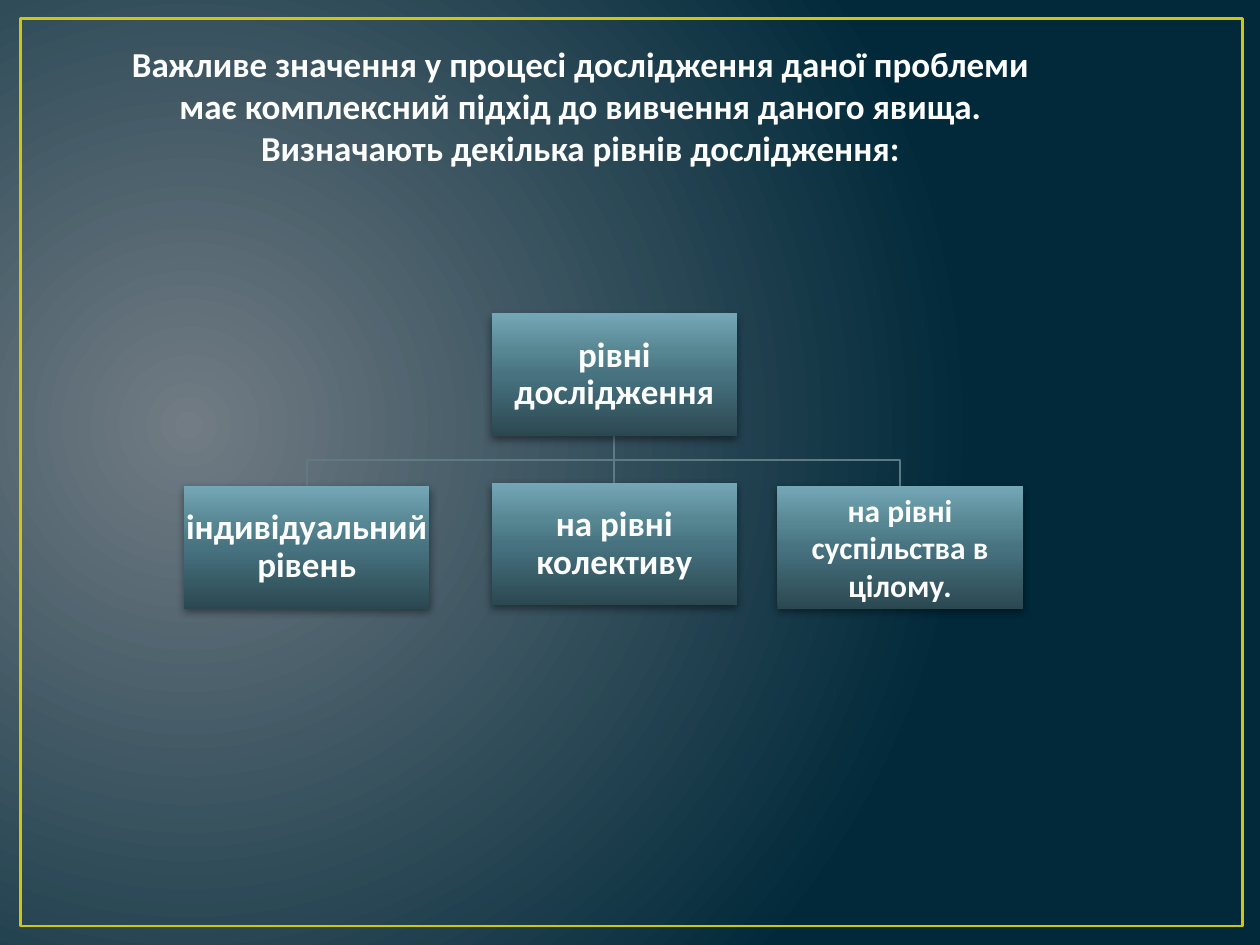
from dataclasses import dataclass

from lxml import etree
from pptx import Presentation
from pptx.dml.color import RGBColor
from pptx.enum.shapes import MSO_CONNECTOR, MSO_SHAPE
from pptx.enum.text import MSO_ANCHOR, PP_ALIGN
from pptx.oxml import parse_xml
from pptx.oxml.ns import nsdecls, qn
from pptx.util import Cm, Pt

RECTANGLE = MSO_SHAPE.RECTANGLE
STRAIGHT = MSO_CONNECTOR.STRAIGHT
CENTER = PP_ALIGN.CENTER
MIDDLE = MSO_ANCHOR.MIDDLE


@dataclass(frozen=True)
class Theme:
    font: str = "Calibri"
    text: str = "FCFDFD"
    text_outline: str = "5FA6BB"
    frame: str = "CFC60D"
    branch: str = "5E7B84"
    background: tuple = ((0, "717C84"), (100, "01293A"))
    box: tuple = ((0, "2B4851"), (50, "477380"), (70, "588794"), (100, "74A7B6"))
    normal_size: int = 20
    small_size: int = 18
    frame_width: float = 1.5
    branch_width: float = 1.25


BOX_WIDTH, BOX_HEIGHT = 4.95, 2.47
ROOT_LEFT, ROOT_TOP = 9.91, 6.32
BRANCH_LEVEL = 9.27


def gradient(stops, direction):
    stop_xml = "".join(
        f'<a:gs pos="{position * 1000}"><a:srgbClr val="{color}"/></a:gs>'
        for position, color in stops
    )
    return parse_xml(
        f'<a:gradFill {nsdecls("a")} rotWithShape="1">'
        f"<a:gsLst>{stop_xml}</a:gsLst>{direction}</a:gradFill>"
    )


class SlideBuilder:
    def __init__(self, slide, theme):
        self.slide = slide
        self.theme = theme

    def background(self):
        fill = self.slide.background.fill
        fill.solid()
        properties = self.slide.element.find(".//" + qn("p:bgPr"))
        direction = (
            '<a:path path="circle">'
            '<a:fillToRect l="15000" t="50000" r="85000" b="60000"/></a:path>'
        )
        properties.replace(
            properties.find(qn("a:solidFill")),
            gradient(self.theme.background, direction),
        )

    def style_line(self, line, color, width):
        line.color.rgb = RGBColor.from_string(color)
        line.width = Pt(width)

    def frame(self, left, top, width, height):
        shape = self.slide.shapes.add_shape(
            RECTANGLE, Cm(left), Cm(top), Cm(width), Cm(height)
        )
        shape.shadow.inherit = False
        shape.fill.background()
        self.style_line(shape.line, self.theme.frame, self.theme.frame_width)

    def set_text(self, shape, text, size):
        """Put one centred bold paragraph with outlined letters in the shape."""
        shape.text_frame.word_wrap = True
        paragraph = shape.text_frame.paragraphs[0]
        paragraph.text = text
        paragraph.alignment = CENTER
        font = paragraph.font
        font.name = self.theme.font
        font.size = Pt(size)
        font.bold = True
        font.color.rgb = RGBColor.from_string(self.theme.text)
        outline = parse_xml(
            f'<a:ln {nsdecls("a")} w="900"><a:solidFill>'
            f'<a:srgbClr val="{self.theme.text_outline}"><a:alpha val="55000"/>'
            '</a:srgbClr></a:solidFill><a:prstDash val="solid"/></a:ln>'
        )
        shape.element.find(".//" + qn("a:defRPr")).insert(0, outline)
        return paragraph

    def title(self, text, left, top, width, height):
        text_box = self.slide.shapes.add_textbox(
            Cm(left), Cm(top), Cm(width), Cm(height)
        )
        self.set_text(text_box, text, self.theme.normal_size)

    def branch(self, start_x, start_y, end_x, end_y):
        """Join two boxes: straight down, or with a step at the branch level."""
        shapes = self.slide.shapes
        if start_x == end_x:
            shape = shapes.add_connector(
                STRAIGHT, Cm(start_x), Cm(start_y), Cm(end_x), Cm(end_y)
            )
            etree.SubElement(shape.element.spPr, qn("a:effectLst"))
        else:
            builder = shapes.build_freeform(Cm(start_x), Cm(start_y))
            corners = [(start_x, BRANCH_LEVEL), (end_x, BRANCH_LEVEL), (end_x, end_y)]
            builder.add_line_segments([(Cm(x), Cm(y)) for x, y in corners], close=False)
            shape = builder.convert_to_shape()
            shape.shadow.inherit = False
            shape.fill.background()
        self.style_line(shape.line, self.theme.branch, self.theme.branch_width)

    def box(self, text, left, top, size, line_spacing=None):
        shape = self.slide.shapes.add_shape(
            RECTANGLE, Cm(left), Cm(top), Cm(BOX_WIDTH), Cm(BOX_HEIGHT)
        )
        shape.line.fill.background()
        shape.fill.solid()
        properties = shape.element.spPr
        properties.replace(
            properties.find(qn("a:solidFill")),
            gradient(self.theme.box, '<a:lin ang="16200000" scaled="0"/>'),
        )
        shape.shadow.inherit = False
        properties.find(qn("a:effectLst")).append(parse_xml(
            f'<a:outerShdw {nsdecls("a")} blurRad="{Pt(5)}" dist="{Pt(2)}" '
            'dir="5400000" rotWithShape="0"><a:srgbClr val="000000">'
            '<a:alpha val="43000"/></a:srgbClr></a:outerShdw>'
        ))
        frame = shape.text_frame
        frame.vertical_anchor = MIDDLE
        frame.margin_left = frame.margin_right = Cm(0.03)
        frame.margin_top = frame.margin_bottom = Cm(0.03)
        paragraph = self.set_text(shape, text, size)
        if line_spacing:
            paragraph.line_spacing = line_spacing
            paragraph.space_after = Pt(0.35 * size)


def main():
    presentation = Presentation()
    presentation.slide_width, presentation.slide_height = Cm(25.4), Cm(19.05)
    slide = presentation.slides.add_slide(presentation.slide_layouts[6])
    theme = Theme()
    builder = SlideBuilder(slide, theme)

    builder.background()
    builder.frame(0.41, 0.38, 24.64, 18.29)
    builder.title(
        "Важливе значення у процесі дослідження даної проблеми має комплексний "
        "підхід до вивчення даного явища. Визначають декілька рівнів дослідження:",
        1.9, 0.74, 19.61, 2.82,
    )

    levels = [
        ("індивідуальний рівень", 3.71, 9.8, theme.normal_size, 0.9),
        ("на рівні колективу", ROOT_LEFT, 9.73, theme.normal_size, 0.9),
        ("на рівні суспільства в цілому.", 15.67, 9.8, theme.small_size, None),
    ]
    half = BOX_WIDTH / 2
    for _, left, top, _, _ in levels:
        builder.branch(ROOT_LEFT + half, ROOT_TOP + BOX_HEIGHT, left + half, top)
    builder.box("рівні дослідження", ROOT_LEFT, ROOT_TOP, theme.normal_size, 0.9)
    for level in levels:
        builder.box(*level)

    presentation.save("out.pptx")


if __name__ == "__main__":
    main()
